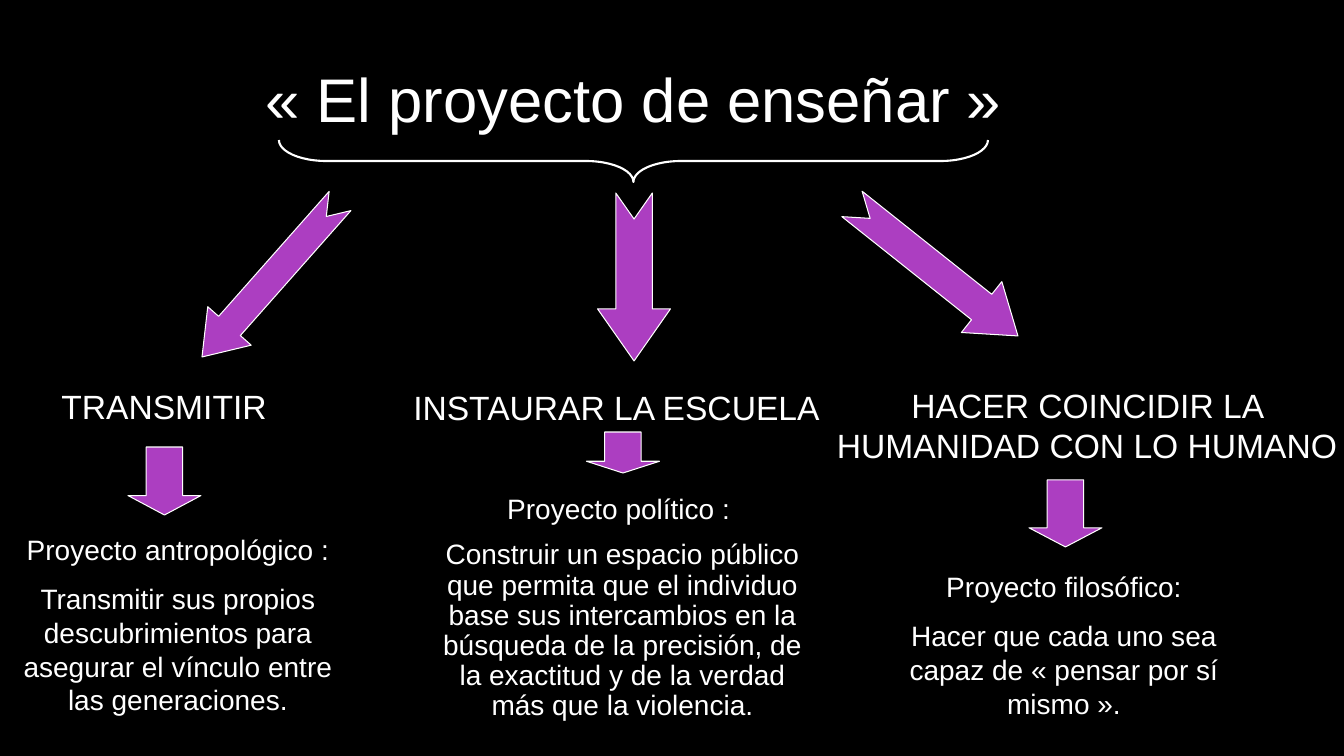
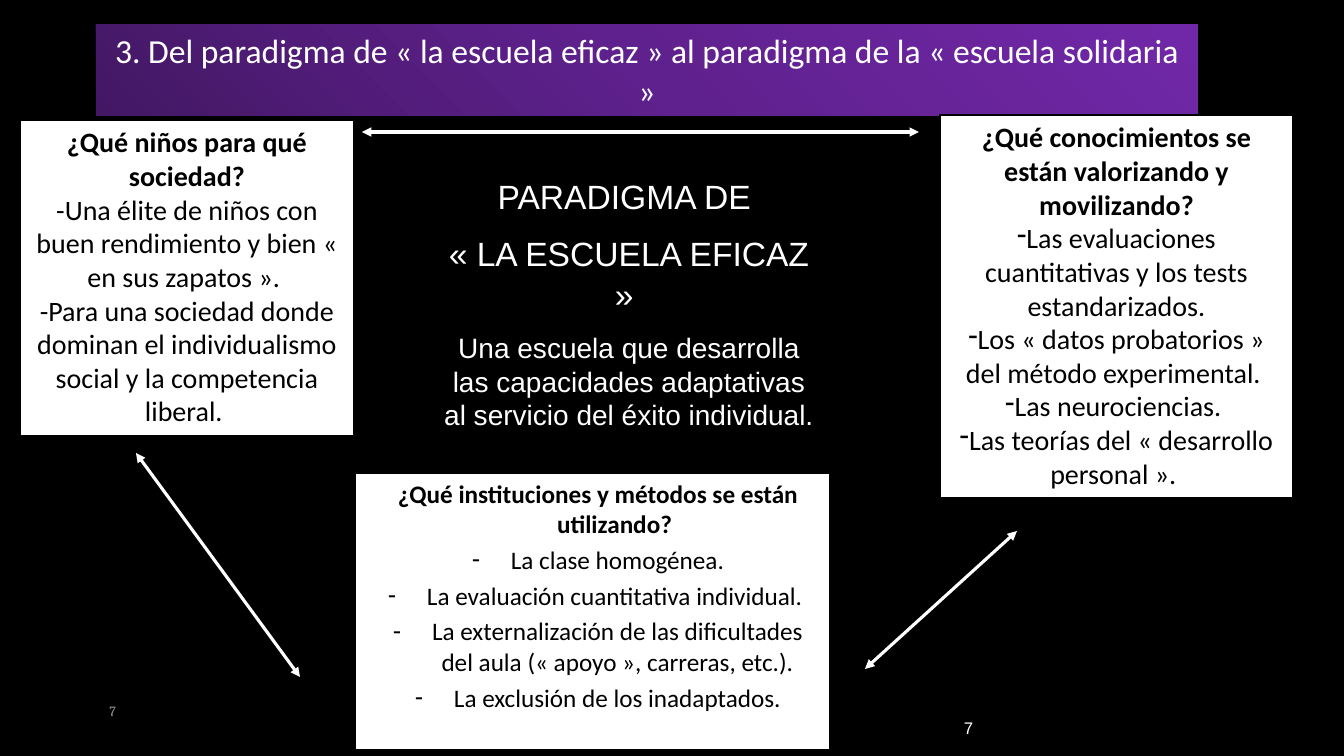
from dataclasses import dataclass
from math import atan2, degrees, hypot
from typing import NamedTuple

from lxml.etree import SubElement
from copy import deepcopy
from pptx import Presentation
from pptx.dml.color import RGBColor
from pptx.enum.shapes import MSO_CONNECTOR as Connector, MSO_SHAPE as Preset
from pptx.enum.text import MSO_ANCHOR as Anchor, MSO_AUTO_SIZE as AutoSize, PP_ALIGN as Align
from pptx.oxml.ns import qn
from pptx.util import Emu, Pt

EMU_PER_PX = 914400 / 100.8
SLIDE_WIDTH, SLIDE_HEIGHT = 1344, 756
TITLE_ONLY, TITLE_AND_CONTENT = 5, 1


@dataclass(frozen=True)
class Theme:
    black: RGBColor = RGBColor(0x00, 0x00, 0x00)
    white: RGBColor = RGBColor(0xFF, 0xFF, 0xFF)
    purple: RGBColor = RGBColor(0xAC, 0x3E, 0xC1)
    grey: RGBColor = RGBColor(0x9B, 0x9A, 0x98)
    band: tuple = ("431764", "5F218E", "7128A8")
    sans: str = "Arial"
    panel: str = "Calibri"
    serif: str = "Cambria"
    title: int = 44
    heading: int = 24
    body: int = 20
    small: int = 18


THEME = Theme()


class Box(NamedTuple):
    left: float
    top: float
    width: float
    height: float

    @property
    def center(self):
        return self.left + self.width / 2


def px(value):
    return Emu(round(value * EMU_PER_PX))


def emu(box):
    return [px(value) for value in box]


# Text
def set_bullet(paragraph, character, margin=0, indent=0):
    properties = paragraph._p.get_or_add_pPr()
    properties.set("marL", str(px(margin)))
    properties.set("indent", str(px(indent)))
    if character:
        SubElement(properties, qn("a:buChar")).set("char", character)
    else:
        SubElement(properties, qn("a:buNone"))


def style(paragraph, font=THEME.sans, size=THEME.body, color=THEME.white,
          bold=False, align=Align.CENTER):
    paragraph.alignment = align
    paragraph.font.name = font
    paragraph.font.size = Pt(size)
    paragraph.font.color.rgb = color
    paragraph.font.bold = bold


def add_paragraphs(frame, texts):
    frame.word_wrap = True
    frame.text = texts[0]
    for text in texts[1:]:
        frame.add_paragraph().text = text
    return frame.paragraphs


def add_text(slide, box, texts, gap=0, line_spacing=None, inset=None,
             anchor=Anchor.TOP, **look):
    frame = slide.shapes.add_textbox(*emu(box)).text_frame
    frame.vertical_anchor = anchor
    if inset is not None:
        frame.margin_left = frame.margin_right = px(inset)
    for index, paragraph in enumerate(add_paragraphs(frame, texts)):
        style(paragraph, **look)
        if line_spacing:
            paragraph.line_spacing = line_spacing
        if index:
            paragraph.space_before = Pt(gap)
    return frame


def place(placeholder, box):
    placeholder.left, placeholder.top, placeholder.width, placeholder.height = emu(box)
    placeholder.text_frame.auto_size = AutoSize.NONE
    return placeholder


def set_title(slide, box, text, **look):
    title = place(slide.shapes.title, box)
    style(add_paragraphs(title.text_frame, [text])[0], **look)
    return title


# Shapes
def add_preset(slide, preset, box, adjustments, fill=None, line_width=0.75):
    shape = slide.shapes.add_shape(preset, *emu(box))
    shape.shadow.inherit = False
    for index, value in enumerate(adjustments):
        shape.adjustments[index] = value
    if fill is None:
        shape.fill.background()
    else:
        shape.fill.solid()
        shape.fill.fore_color.rgb = fill
    shape.line.color.rgb = THEME.white
    shape.line.width = Pt(line_width)
    return shape


def add_notched_arrow(slide, start, end, thickness):
    run, rise = end[0] - start[0], end[1] - start[1]
    length = hypot(run, rise)
    box = Box((start[0] + end[0] - length) / 2, (start[1] + end[1] - thickness) / 2,
              length, thickness)
    arrow = add_preset(slide, Preset.NOTCHED_RIGHT_ARROW, box, (0.5, 0.714), THEME.purple)
    arrow.rotation = degrees(atan2(rise, run))


def add_brace(slide, box):
    # A left brace turned to point down: its sides swap around the box centre
    middle = box.top + box.height / 2
    upright = Box(box.center - box.height / 2, middle - box.width / 2, box.height, box.width)
    brace = add_preset(slide, Preset.LEFT_BRACE, upright, (1.133, 0.5), line_width=1.5)
    brace.rotation = 270


def add_double_arrow(slide, start, end):
    connector = slide.shapes.add_connector(
        Connector.STRAIGHT, *(px(value) for value in (*start, *end)))
    connector.line.color.rgb = THEME.white
    connector.line.width = Pt(2.25)
    line = connector.line._get_or_add_ln()
    for tip in ("a:headEnd", "a:tailEnd"):
        SubElement(line, qn(tip)).set("type", "triangle")
    SubElement(connector._element.spPr, qn("a:effectLst"))


def fill_band(shape):
    shape.fill.gradient()
    stops = shape._element.spPr.find(qn("a:gradFill")).find(qn("a:gsLst"))
    stops.append(deepcopy(stops[0]))
    shape.fill.gradient_angle = 45
    for index, stop in enumerate(shape.fill.gradient_stops):
        stop.color.rgb = RGBColor.from_string(THEME.band[index])
        stop.position = index / 2


# Regions
def add_column(slide, box, heading, texts, heading_width, heading_shift, arrow_shift,
               arrow_top, arrow_height, text_top, line_spacing=None):
    heading_left = box.center + heading_shift - heading_width / 2
    add_text(slide, Box(heading_left, box.top, heading_width, 50), [heading],
             inset=0, size=THEME.heading)
    arrow_box = Box(box.center + arrow_shift - 36, box.top + arrow_top, 73, arrow_height)
    add_preset(slide, Preset.DOWN_ARROW, arrow_box, (0.5, 0.286), THEME.purple)
    text_box = Box(box.left, box.top + text_top, box.width, box.height - text_top)
    add_text(slide, text_box, texts, gap=11, line_spacing=line_spacing)


def fill_panel(shape, question, answers, size=THEME.body, bullet=None,
               margin=0, indent=0, gap=0):
    shape.fill.solid()
    shape.fill.fore_color.rgb = THEME.white
    shape.line.color.rgb = THEME.black
    shape.line.width = Pt(1.5)
    frame = shape.text_frame
    frame.vertical_anchor = Anchor.TOP
    for index, paragraph in enumerate(add_paragraphs(frame, [question, *answers])):
        set_bullet(paragraph, bullet if index else None, margin, indent)
        style(paragraph, THEME.panel, size, THEME.black, bold=index == 0)
        paragraph.space_before = Pt(gap if index else 0)


def add_panel(slide, box, question, answers, **options):
    shape = slide.shapes.add_shape(Preset.RECTANGLE, *emu(box))
    shape.shadow.inherit = False
    fill_panel(shape, question, answers, **options)


# Slides
def build_project_slide(presentation):
    slide = presentation.slides.add_slide(presentation.slide_layouts[TITLE_ONLY])
    set_title(slide, Box(215, 55, 838, 85), "« El proyecto de enseñar »", size=THEME.title)
    add_brace(slide, Box(279, 140, 709, 42))
    add_notched_arrow(slide, (340, 201), (202, 357), 58)
    add_notched_arrow(slide, (634, 193), (634, 361), 73)
    add_notched_arrow(slide, (852, 204), (1018, 336), 65)

    add_column(
        slide, Box(11, 381, 334, 344), "TRANSMITIR",
        ["Proyecto antropológico :",
         "Transmitir sus propios descubrimientos para asegurar el vínculo entre "
         "las generaciones."],
        heading_width=328, heading_shift=-14, arrow_shift=-14,
        arrow_top=66, arrow_height=68, text_top=147)
    add_column(
        slide, Box(432, 382, 381, 349), "INSTAURAR LA ESCUELA",
        ["Proyecto político : ",
         "Construir un espacio público que permita que el individuo base sus "
         "intercambios en la búsqueda de la precisión, de la exactitud y de la "
         "verdad más que la violencia."],
        heading_width=428, heading_shift=-6, arrow_shift=0,
        arrow_top=50, arrow_height=41, text_top=108, line_spacing=0.9)
    add_column(
        slide, Box(899, 380, 330, 349), "HACER COINCIDIR LA HUMANIDAD CON LO HUMANO",
        ["Proyecto filosófico:",
         "Hacer que cada uno sea capaz de « pensar por sí mismo »."],
        heading_width=514, heading_shift=23, arrow_shift=1,
        arrow_top=100, arrow_height=67, text_top=185)


def build_paradigm_slide(presentation):
    slide = presentation.slides.add_slide(presentation.slide_layouts[TITLE_AND_CONTENT])
    band = set_title(
        slide, Box(96, 24, 1102, 92),
        "3. Del paradigma de « la escuela eficaz » al paradigma de la « escuela solidaria »",
        font=THEME.panel, size=THEME.heading)
    fill_band(band)

    # Central paradigm
    frame = add_text(
        slide, Box(429, 171, 400, 271),
        ["PARADIGMA DE ", "« LA ESCUELA EFICAZ » ",
         "Una escuela que desarrolla las capacidades adaptativas al servicio del "
         "éxito individual."],
        gap=12, size=THEME.heading)
    frame.paragraphs[2].font.size = Pt(THEME.body)

    # Three questions around it
    fill_panel(
        place(slide.placeholders[1], Box(355, 473, 475, 277)),
        "¿Qué instituciones y métodos se están utilizando? ",
        ["La clase homogénea.",
         "La evaluación cuantitativa individual. ",
         "La externalización de las dificultades del aula (« apoyo », carreras, etc.).",
         "La exclusión de los inadaptados."],
        size=THEME.small, bullet="-", margin=50, indent=-39, gap=4)
    add_panel(
        slide, Box(20, 120, 334, 316), "¿Qué niños para qué sociedad?",
        ["-Una élite de niños con buen rendimiento y bien « en sus zapatos ». ",
         "-Para una sociedad donde dominan el individualismo social y la "
         "competencia liberal. "])
    add_panel(
        slide, Box(940, 115, 353, 383),
        "¿Qué conocimientos se están valorizando y movilizando?",
        ["Las evaluaciones cuantitativas y los tests estandarizados.",
         "Los « datos probatorios » del método experimental. ",
         "Las neurociencias. ",
         "Las teorías del « desarrollo personal ». "],
        bullet="-")

    # Links between the questions
    for start, end in (((136, 453), (300, 677)),
                       ((362, 132), (919, 132)),
                       ((1017, 531), (865, 669))):
        add_double_arrow(slide, start, end)

    # Page numbers
    add_text(slide, Box(899, 708, 84, 40), ["7"], anchor=Anchor.MIDDLE,
             size=12, align=Align.RIGHT)
    number = add_text(slide, Box(0, 679, 116, 40), ["7"], inset=0, anchor=Anchor.BOTTOM,
                      font=THEME.serif, size=10, color=THEME.grey, align=Align.RIGHT)
    number.margin_top = number.margin_bottom = 0


def main():
    presentation = Presentation()
    presentation.slide_width = px(SLIDE_WIDTH)
    presentation.slide_height = px(SLIDE_HEIGHT)
    background = presentation.slide_master.background.fill
    background.solid()
    background.fore_color.rgb = THEME.black
    build_project_slide(presentation)
    build_paradigm_slide(presentation)
    presentation.save("out.pptx")


if __name__ == "__main__":
    main()
